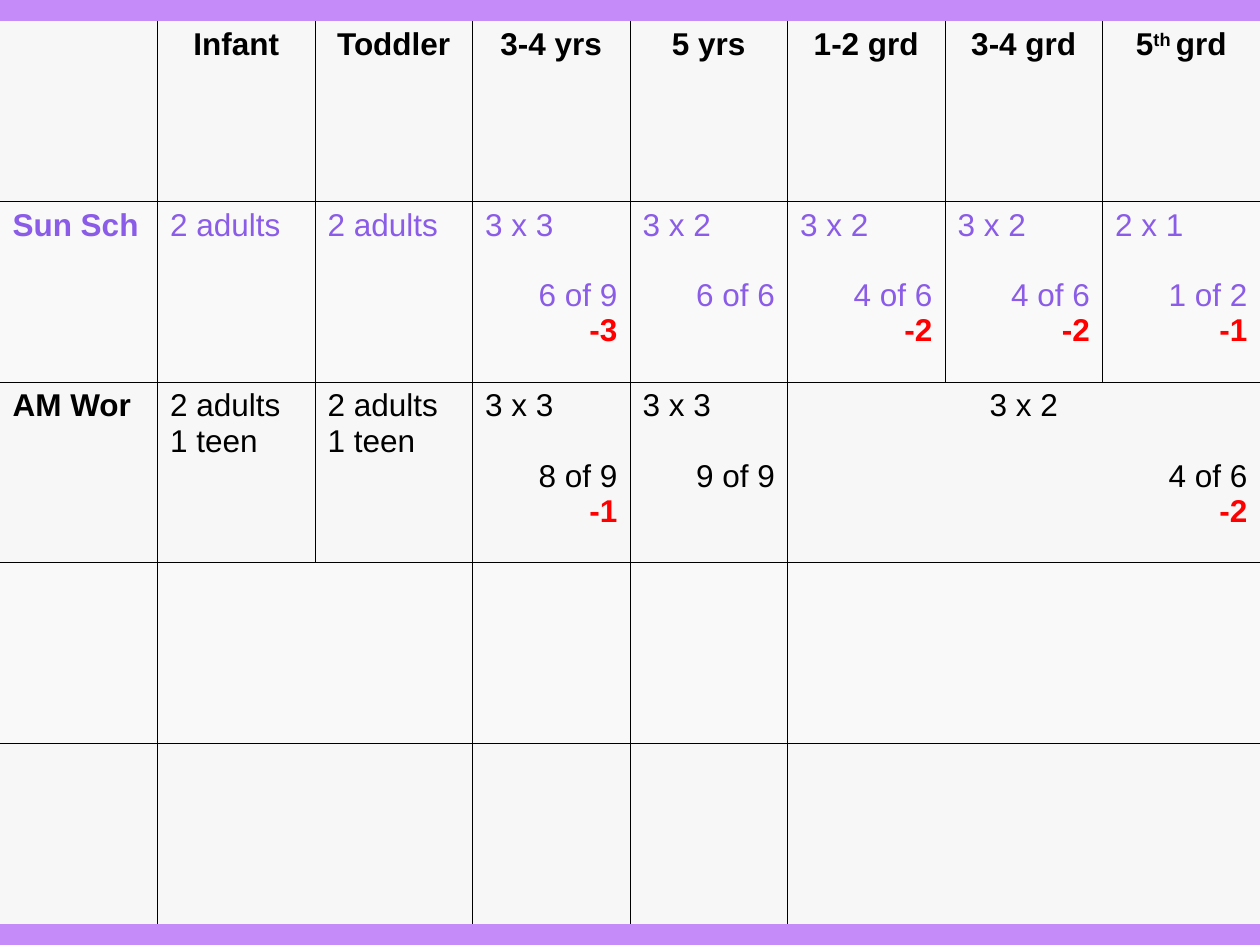
from lxml.etree import SubElement, fromstring
from pptx import Presentation
from pptx.dml.color import RGBColor
from pptx.enum.text import PP_ALIGN
from pptx.oxml.ns import qn, nsdecls
from pptx.util import Pt

SCALE = 914400 / 126
COLORS = {"back": "C58BF9", "plain": "F7F7F7", "tint": "F9F9F9",
          "black": "000000", "violet": "8A5CE7", "red": "FF0000"}
# Text between carets is raised.
HEADS = ["", "Infant", "Toddler", "3-4 yrs", "5 yrs", "1-2 grd", "3-4 grd", "5^th ^grd"]
SUNDAY = ["Sun Sch", "2 adults", "2 adults", "3 x 3|6 of 9|-3", "3 x 2|6 of 6",
          "3 x 2|4 of 6|-2", "3 x 2|4 of 6|-2", "2 x 1|1 of 2|-1"]
MORNING = ["AM Wor", "2 adults|1 teen", "2 adults|1 teen", "3 x 3|8 of 9|-1",
           "3 x 3|9 of 9", "3 x 2|4 of 6|-2", "", ""]
ROWS = [HEADS, SUNDAY, MORNING, [""] * 8, [""] * 8]
SPANS = [(2, 5, 7), (3, 1, 2), (3, 5, 7), (4, 1, 2), (4, 5, 7)]


def px(count):
    return round(count * SCALE)


def rgb(name):
    return RGBColor.from_string(COLORS[name])


def add_line(para, text, color, bold):
    for order, part in enumerate(text.split("^")):
        run = para.add_run()
        run.text = part
        for key, value in {"name": "Arial", "size": Pt(18), "bold": bold}.items():
            setattr(run.font, key, value)
        run.font.color.rgb = rgb(color)
        if order % 2:
            run.font._element.set("baseline", "30000")


def fill_text(cell, text, align, color, bold):
    """Write the lines of a cell; counts go right, shortfalls right in red."""
    frame = cell.text_frame
    for order, line in enumerate(text.split("|")):
        para = frame.add_paragraph() if order else frame.paragraphs[0]
        count, short = " of " in line, line.startswith("-")
        para.alignment = PP_ALIGN.RIGHT if count or short else align
        if count:
            para.space_before = Pt(20)
        add_line(para, line, "red" if short else color, bold or short)


def set_edges(cell, sides):
    """Rule the named sides of a cell and clear the others."""
    props = cell._tc.get_or_add_tcPr()
    for order, side in enumerate("LRTB"):
        edge = fromstring(f'<a:ln{side} {nsdecls("a")} w="6350"/>')
        if side in sides:
            solid = SubElement(edge, qn("a:solidFill"))
            SubElement(solid, qn("a:srgbClr"), val=COLORS["black"])
        else:
            SubElement(edge, qn("a:noFill"))
        props.insert(order, edge)


def inner_sides(table, row, col):
    """Name the sides that lie between two separate cells."""
    last_row, last_col = len(table.rows) - 1, len(table.columns) - 1
    tests = {"L": col > 0 and not table.cell(row, col).is_spanned,
             "R": col < last_col and not table.cell(row, col + 1).is_spanned,
             "T": row > 0, "B": row < last_row}
    return [side for side, inner in tests.items() if inner]


def add_grid(slide):
    table = slide.shapes.add_table(len(ROWS), len(HEADS), 0, px(21),
                                   px(1260), px(903)).table
    for row, first, last in SPANS:
        table.cell(row, first).merge(table.cell(row, last))
    for row, texts in enumerate(ROWS):
        for col, text in enumerate(texts):
            cell = table.cell(row, col)
            cell.fill.solid()
            cell.fill.fore_color.rgb = rgb("tint" if row % 2 else "plain")
            set_edges(cell, inner_sides(table, row, col))
            if text:
                center = row == 0 or cell.is_merge_origin
                fill_text(cell, text, PP_ALIGN.CENTER if center else PP_ALIGN.LEFT,
                          "violet" if row == 1 else "black", row == 0 or col == 0)


def main():
    deck = Presentation()
    deck.slide_width, deck.slide_height = px(1260), px(945)
    slide = deck.slides.add_slide(deck.slide_layouts[6])
    slide.background.fill.solid()
    slide.background.fill.fore_color.rgb = rgb("back")
    add_grid(slide)
    deck.save("out.pptx")


if __name__ == "__main__":
    main()
